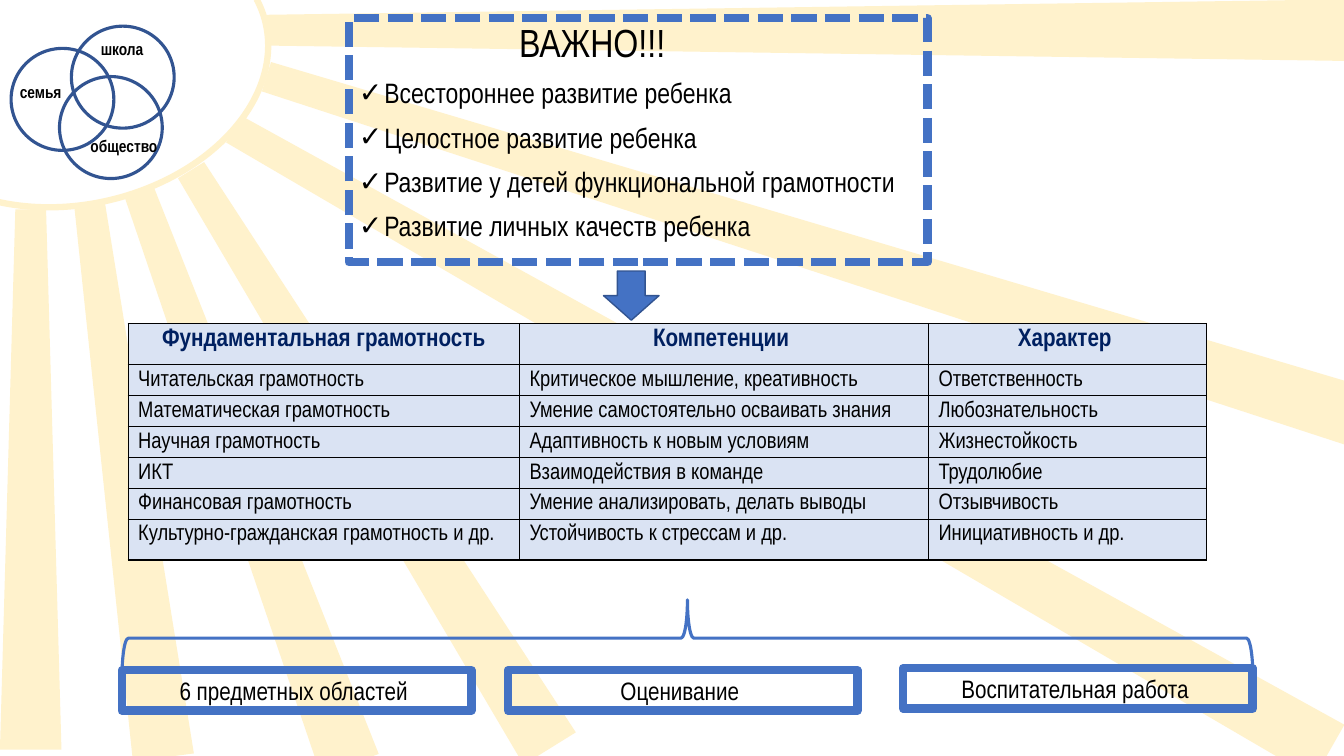
from dataclasses import dataclass

from lxml import etree
from pptx import Presentation
from pptx.dml.color import RGBColor
from pptx.enum.dml import MSO_LINE
from pptx.enum.shapes import MSO_SHAPE
from pptx.enum.text import MSO_ANCHOR, MSO_AUTO_SIZE, PP_ALIGN
from pptx.oxml.ns import qn
from pptx.util import Cm, Pt

ARC, RAY = MSO_SHAPE.ARC, MSO_SHAPE.TRAPEZOID
RECT, RING = MSO_SHAPE.RECTANGLE, MSO_SHAPE.OVAL
ARROW, BRACE = MSO_SHAPE.DOWN_ARROW, MSO_SHAPE.RIGHT_BRACE
DASH = MSO_LINE.SQUARE_DOT
CENTER, LEFT = PP_ALIGN.CENTER, PP_ALIGN.LEFT
MIDDLE, TOP = MSO_ANCHOR.MIDDLE, MSO_ANCHOR.TOP
FIXED = MSO_AUTO_SIZE.NONE


@dataclass(frozen=True)
class Theme:
    font: str = "Arial Narrow"
    sun: str = "FFF2CC"
    blue: str = "4472C4"
    deep: str = "325491"
    navy: str = "002060"
    pale: str = "DAE3F3"
    ink: str = "000000"
    title: int = 28
    item: int = 20
    head: int = 18
    cell: int = 16
    label: int = 12


THEME = Theme()

RAYS = [  # left, top, length, turn
    (8.56, 3.0, 17.15, 328.2),
    (19.51, -12.83, 27.18, 270),
    (0, 5.28, 13.61, 0),
    (2.41, 5.03, 14.12, 352.4),
    (5.38, 4.32, 15.42, 339.8),
    (19.79, -8.26, 29.01, 287.3),
    (18.92, -4.78, 31.75, 299.6),
]
GOALS = [
    "Всестороннее развитие ребенка",
    "Целостное развитие ребенка",
    "Развитие у детей функциональной грамотности",
    "Развитие личных качеств ребенка",
]
SKILLS = [
    ("Фундаментальная грамотность", "Компетенции ", "Характер "),
    ("Читательская грамотность", "Критическое мышление, креативность", "Ответственность"),
    ("Математическая грамотность", "Умение самостоятельно осваивать знания", "Любознательность"),
    ("Научная грамотность", "Адаптивность к новым условиям", "Жизнестойкость"),
    ("ИКТ", "Взаимодействия в команде", "Трудолюбие"),
    ("Финансовая грамотность", "Умение анализировать, делать выводы", "Отзывчивость"),
    ("Культурно-гражданская грамотность и др.", "Устойчивость к стрессам и др.",
     "Инициативность и др."),
]
TAGS = [  # text, left, top
    ("6 предметных областей ", 0, 0.05),
    ("Оценивание ", 9.73, 0.05),
    ("Воспитательная работа ", 19.69, 0),
]
RINGS = [(1.52, 0), (0, 0.56), (1.22, 1.27)]
LABELS = [  # text, left, top, width
    ("семья", -0.03, 1.27, 1.57),
    ("школа", 2.01, 0.2, 1.6),
    ("общество", 1.75, 2.64, 2.24),
]


def tint(code):
    return RGBColor.from_string(code)


def draw(shapes, kind, box, fill=None, line=None, width=1, turn=0):
    shape = shapes.add_shape(kind, *map(Cm, box))
    shape.shadow.inherit = False
    shape.rotation = turn
    if fill:
        shape.fill.solid()
        shape.fill.fore_color.rgb = tint(fill)
    else:
        shape.fill.background()
    if line:
        shape.line.color.rgb = tint(line)
        shape.line.width = Pt(width)
    else:
        shape.line.fill.background()
    return shape


def write(para, text, size, color=THEME.ink, bold=False, align=LEFT):
    para.alignment = align
    run = para.add_run()
    run.text = text
    font = run.font
    font.name, font.size, font.bold = THEME.font, Pt(size), bold
    font.color.rgb = tint(color)


def indent(para, margin, first, mark=None):
    props = para._p.get_or_add_pPr()
    props.set("marL", str(Cm(margin)))
    props.set("indent", str(Cm(first)))
    bullet = etree.SubElement(props, qn("a:buChar" if mark else "a:buNone"))
    if mark:
        bullet.set("char", mark)


def edge(cell):
    props = cell._tc.get_or_add_tcPr()
    for spot, side in enumerate(("lnL", "lnR", "lnT", "lnB")):
        line = etree.Element(qn("a:" + side), w=str(Pt(1)))
        fill = etree.SubElement(line, qn("a:solidFill"))
        etree.SubElement(fill, qn("a:srgbClr"), val=THEME.ink)
        props.insert(spot, line)


def add_sun(slide, box):
    x, y = box
    # Disc edge
    disc = draw(slide.shapes, ARC, (x - 1.5, y - 3.18, 6.91, 9.73),
                line=THEME.sun, width=4.5, turn=77)
    disc.adjustments[0], disc.adjustments[1] = 157.37, 26.45
    # Rays
    group = slide.shapes.add_group_shape()
    for left, top, length, turn in RAYS:
        draw(group.shapes, RAY, (x + left, y + top, 1.55, length),
             fill=THEME.sun, turn=turn)


def add_skills(slide, box):
    cols, rows = (9.86, 10.31, 7.01), (1.04, *[0.78] * 5, 1.02)
    grid = slide.shapes.add_table(len(rows), len(cols), *map(Cm, box)).table
    grid.first_row = grid.horz_banding = False
    for col, width in zip(grid.columns, cols):
        col.width = Cm(width)
    for num, (row, height, texts) in enumerate(zip(grid.rows, rows, SKILLS)):
        row.height = Cm(height)
        for cell, text in zip(row.cells, texts):
            cell.margin_top, cell.margin_bottom = Cm(0.13), 0
            cell.fill.solid()
            cell.fill.fore_color.rgb = tint(THEME.pale)
            edge(cell)
            para = cell.text_frame.paragraphs[0]
            if num:
                write(para, text, THEME.cell)
            else:
                write(para, text, THEME.head, THEME.navy, True, CENTER)


def add_goals(slide, box):
    body = slide.placeholders[1]
    # Bring in front of the rays
    slide.shapes._spTree.append(body._element)
    body.left, body.top, body.width, body.height = map(Cm, box)
    body.line.color.rgb = tint(THEME.blue)
    body.line.width, body.line.dash_style = Pt(6), DASH
    frame = body.text_frame
    frame.auto_size, frame.vertical_anchor = FIXED, TOP
    for num, text in enumerate(["ВАЖНО!!!", *GOALS]):
        para = frame.add_paragraph() if num else frame.paragraphs[0]
        para.line_spacing, para.space_before = 0.9, Pt(10)
        if num:
            indent(para, 0.64, -0.64, "✓")
        else:
            indent(para, 0, 4.04)
        write(para, text, THEME.item if num else THEME.title)


def add_tags(slide, box):
    x, y, width, height = box
    group = slide.shapes.add_group_shape()
    for text, left, top in TAGS:
        tag = draw(group.shapes, RECT, (x + left, y + top, width, height),
                   line=THEME.blue, width=6)
        frame = tag.text_frame
        frame.vertical_anchor = MIDDLE
        write(frame.paragraphs[0], text, THEME.head, align=CENTER)


def add_rings(slide, box):
    x, y = box
    group = slide.shapes.add_group_shape()
    for left, top in RINGS:
        draw(group.shapes, RING, (x + left, y + top, 2.59, 2.57),
             line=THEME.deep, width=2.25)
    for text, left, top, width in LABELS:
        label = group.shapes.add_textbox(*map(Cm, (x + left, y + top, width, 0.76)))
        label.text_frame.word_wrap = False
        write(label.text_frame.paragraphs[0], text, THEME.label, bold=True)


def main():
    deck = Presentation()
    deck.slide_width, deck.slide_height = Cm(33.87), Cm(19.05)
    slide = deck.slides.add_slide(deck.slide_layouts[1])
    title = slide.shapes.title._element
    title.getparent().remove(title)

    add_sun(slide, (0, 0))
    add_skills(slide, (3.23, 8.15, 27.18, 5.96))
    add_goals(slide, (8.79, 0.46, 14.58, 6.15))
    draw(slide.shapes, ARROW, (15.21, 6.83, 1.4, 1.24), THEME.blue, THEME.deep)
    add_tags(slide, (3.07, 16.84, 8.81, 1.02))
    draw(slide.shapes, BRACE, (16.36, 1.83, 1.93, 28.5),
         line=THEME.blue, width=2.25, turn=270)
    add_rings(slide, (0.28, 0.66))
    deck.save("out.pptx")


if __name__ == "__main__":
    main()
